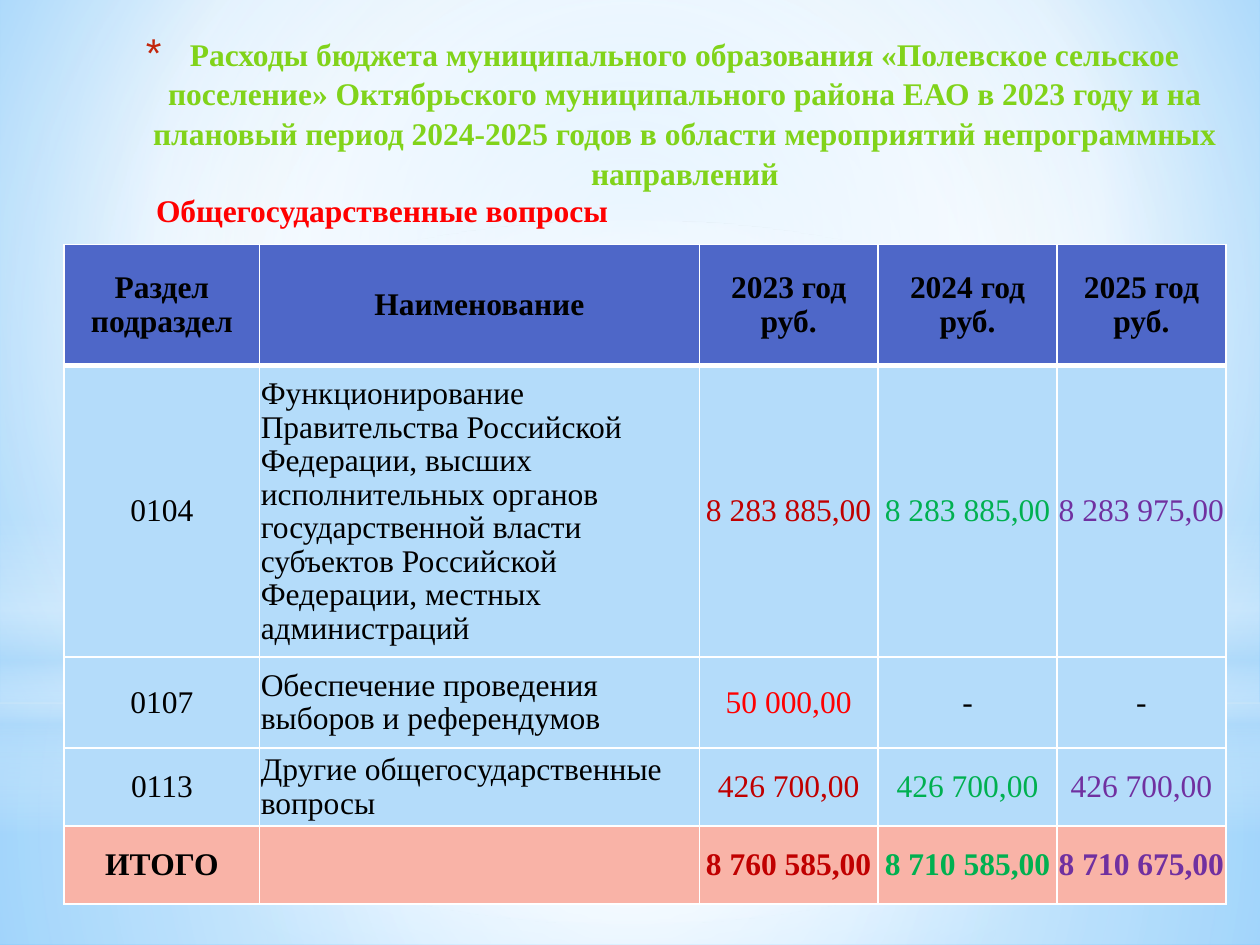
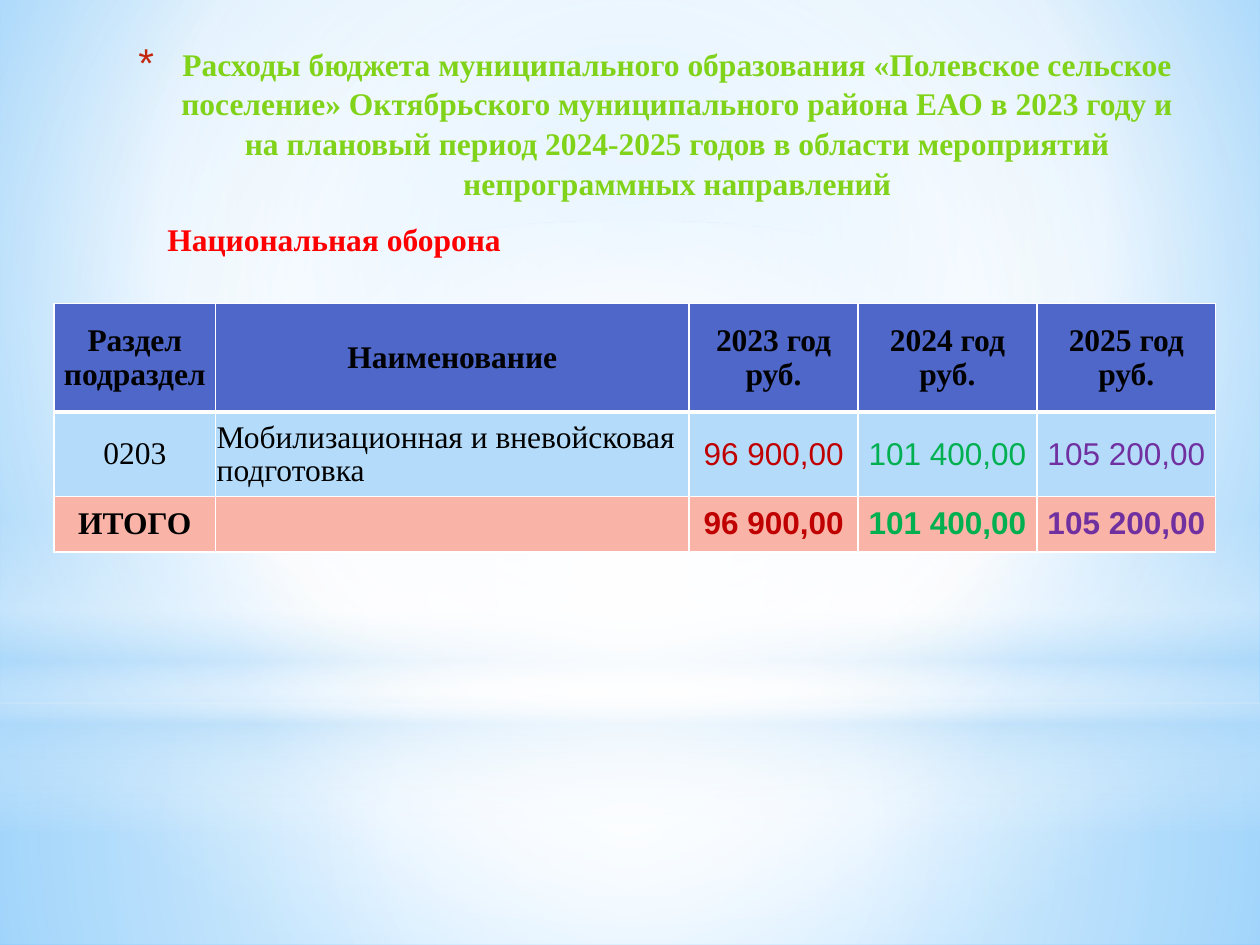
from dataclasses import dataclass

from lxml.etree import SubElement
from pptx import Presentation
from pptx.dml.color import RGBColor
from pptx.enum.shapes import MSO_SHAPE
from pptx.enum.text import MSO_ANCHOR, MSO_AUTO_SIZE, PP_ALIGN
from pptx.oxml.ns import qn
from pptx.util import Inches, Pt


@dataclass(frozen=True)
class Theme:
    title: str = "81D31A"
    bullet: str = "C3260C"
    accent: str = "FF0000"
    ink: str = "000000"
    white: str = "FFFFFF"
    sky: str = "B4DCFA"
    header: str = "4E67C8"
    total: str = "F9B3A7"
    years: tuple = ("C00000", "00B050", "7030A0")
    serif: str = "Times New Roman"
    sans: str = "Arial"
    size: int = 18


THEME = Theme()
WIDTH, HEIGHT = Inches(10), Inches(7.5)
TITLE_ONLY = 5
CENTER = (50, 50, 50, 50)
HEADING = (
    "Расходы бюджета муниципального образования «Полевское сельское поселение» "
    "Октябрьского муниципального района ЕАО в 2023 году и на плановый период "
    "2024-2025 годов в области мероприятий непрограммных направлений"
)
HEADERS = ["Раздел подраздел", "Наименование", "2023 год\nруб.", "2024 год руб.", "2025 год руб."]


# Lengths are percentages of the slide's width and height
def across(share):
    return round(WIDTH * share / 100)


def down(share):
    return round(HEIGHT * share / 100)


def box(left, top, width, height):
    return across(left), down(top), across(width), down(height)


def write(frame, text, font=THEME.serif, color=THEME.ink, bold=False,
          align=PP_ALIGN.LEFT, spacing=None):
    frame.word_wrap = True
    frame.text = text
    for paragraph in frame.paragraphs:
        paragraph.alignment = align
        paragraph.line_spacing = spacing
        paragraph.font.size = Pt(THEME.size)
        for run in paragraph.runs:
            run.font.name = font
            run.font.size = Pt(THEME.size)
            run.font.bold = bold
            run.font.color.rgb = RGBColor.from_string(color)


def gradient(parent, stops, center=None):
    """Swap the solid fill under parent for a radial or a downward gradient."""
    solid = parent.find(qn("a:solidFill"))
    fill = parent.makeelement(qn("a:gradFill"), {"rotWithShape": "1"})
    parent.replace(solid, fill)
    stop_list = SubElement(fill, qn("a:gsLst"))
    for position, color, opacity in stops:
        stop = SubElement(stop_list, qn("a:gs"), pos=str(position * 1000))
        tint = SubElement(stop, qn("a:srgbClr"), val=color)
        if opacity < 100:
            SubElement(tint, qn("a:alpha"), val=str(opacity * 1000))
    if center:
        focus = SubElement(fill, qn("a:path"), path="circle")
        sides = {side: str(share * 1000) for side, share in zip("ltrb", center)}
        SubElement(focus, qn("a:fillToRect"), sides)
    else:
        SubElement(fill, qn("a:lin"), ang="5400000", scaled="0")


# Shared backdrop, kept on the slide master
def add_backdrop(master, slide):
    white, sky = THEME.white, THEME.sky
    master.background.fill.solid()
    gradient(master.element.find(".//" + qn("p:bgPr")),
             [(0, "9ED5FF", 100), (60, white, 100), (100, "5BB9FF", 100)], (20, 10, 20, 60))
    glows = [
        (MSO_SHAPE.RECTANGLE, (0, 74.4, 100, 25.6),
         [(0, white, 91), (37, white, 76), (100, sky, 79)], CENTER),
        (MSO_SHAPE.RECTANGLE, (0, 0, 100, 74.4),
         [(0, white, 89), (48, white, 62), (100, sky, 79)], CENTER),
        (MSO_SHAPE.RECTANGLE, (0, 54.93, 100, 33.33),
         [(0, white, 0), (29, white, 30), (45, sky, 40), (55, white, 26),
          (65, sky, 60), (100, white, 0)], None),
        (MSO_SHAPE.OVAL, (0, 23.33, 100, 74.4),
         [(0, white, 100), (56, white, 0)], CENTER),
    ]
    for order, (outline, area, stops, center) in enumerate(glows):
        glow = slide.shapes.add_shape(outline, *box(*area))
        glow.shadow.inherit = False
        glow.line.fill.background()
        glow.fill.solid()
        gradient(glow.element.spPr, stops, center)
        glow.element.nvSpPr.cNvPr.set("id", str(100 + order))
        master.shapes.element.insert(2 + order, glow.element)


def add_heading(slide, area):
    heading = slide.shapes.title
    heading.left, heading.top, heading.width, heading.height = box(*area)
    frame = heading.text_frame
    frame.auto_size = MSO_AUTO_SIZE.NONE
    frame.vertical_anchor = MSO_ANCHOR.TOP
    write(frame, HEADING, color=THEME.title, bold=True, align=PP_ALIGN.CENTER, spacing=1.05)
    # Hanging asterisk bullet
    layout = frame.paragraphs[0]._p.get_or_add_pPr()
    layout.set("marL", str(Inches(0.35)))
    layout.set("indent", str(-Inches(0.35)))
    SubElement(SubElement(layout, qn("a:buClr")), qn("a:srgbClr"), val=THEME.bullet)
    SubElement(layout, qn("a:buSzPct"), val="128000")
    SubElement(layout, qn("a:buFont"), typeface=THEME.sans)
    SubElement(layout, qn("a:buChar"), char="*")


def add_section(slide, text, area):
    section = slide.shapes.add_textbox(*box(*area))
    write(section.text_frame, text, color=THEME.accent, bold=True)


def set_borders(cell, bottom):
    properties = cell._tc.get_or_add_tcPr()
    for order, (side, points) in enumerate([("L", 1), ("R", 1), ("T", 1), ("B", bottom)]):
        edge = properties.makeelement(qn("a:ln" + side), {"w": str(Pt(points))})
        SubElement(SubElement(edge, qn("a:solidFill")), qn("a:srgbClr"), val=THEME.white)
        properties.insert(order, edge)


def add_budget(slide, left, top, columns, heights, lines, amount_font=THEME.serif):
    rows = [HEADERS, *lines]
    area = box(left, top, sum(columns), sum(heights))
    budget = slide.shapes.add_table(len(rows), len(columns), *area).table
    budget.horz_banding = False
    for column, width in zip(budget.columns, columns):
        column.width = across(width)
    for r, (row, height) in enumerate(zip(rows, heights)):
        budget.rows[r].height = down(height)
        is_header, is_total = r == 0, r == len(rows) - 1
        fill = THEME.header if is_header else THEME.total if is_total else THEME.sky
        for c, text in enumerate(row):
            cell = budget.cell(r, c)
            cell.fill.solid()
            cell.fill.fore_color.rgb = RGBColor.from_string(fill)
            cell.margin_left = cell.margin_right = cell.margin_top = Inches(0.01)
            cell.margin_bottom = 0
            cell.vertical_anchor = MSO_ANCHOR.MIDDLE
            is_amount = c > 1 and not is_header
            color = THEME.years[c - 2] if is_amount and text != "-" else THEME.ink
            if text == "50 000,00":
                color = THEME.accent
            write(cell.text_frame, text,
                  font=amount_font if is_amount else THEME.serif, color=color,
                  bold=is_header or is_total, spacing=0.96,
                  align=PP_ALIGN.LEFT if c == 1 and not is_header else PP_ALIGN.CENTER)
            set_borders(cell, bottom=3 if is_header else 1)


def main():
    deck = Presentation()
    deck.slide_width, deck.slide_height = WIDTH, HEIGHT
    layout = deck.slide_layouts[TITLE_ONLY]

    # General state matters
    general = deck.slides.add_slide(layout)
    add_backdrop(deck.slide_master, general)
    add_section(general, "Общегосударственные вопросы", (11.4, 19.6, 40, 5.33))
    add_heading(general, (7.5, 2.8, 90.2, 19.07))
    add_budget(general, 5.1, 25.87, [15.5, 34.9, 14.2, 14.2, 13.4],
               [12.8, 30.53, 9.6, 8.27, 8.27], [
        ["0104", "Функционирование Правительства Российской Федерации, высших "
         "исполнительных органов государственной власти субъектов Российской "
         "Федерации, местных администраций",
         "8 283 885,00", "8 283 885,00", "8 283 975,00"],
        ["0107", "Обеспечение проведения выборов и референдумов", "50 000,00", "-", "-"],
        ["0113", "Другие общегосударственные вопросы",
         "426 700,00", "426 700,00", "426 700,00"],
        ["ИТОГО", "", "8 760 585,00", "8 710 585,00", "8 710 675,00"],
    ])

    # National defence
    defence = deck.slides.add_slide(layout)
    add_heading(defence, (8.3, 3.87, 87.4, 16.67))
    add_section(defence, "Национальная оборона", (12.3, 22.67, 34.5, 5.33))
    add_budget(defence, 4.3, 32.13, [12.8, 37.6, 13.4, 14.2, 14.2],
               [11.47, 8.93, 5.87], [
        ["0203", "Мобилизационная и вневойсковая подготовка",
         "96 900,00", "101 400,00", "105 200,00"],
        ["ИТОГО", "", "96 900,00", "101 400,00", "105 200,00"],
    ], amount_font=THEME.sans)

    deck.save("out.pptx")


if __name__ == "__main__":
    main()
